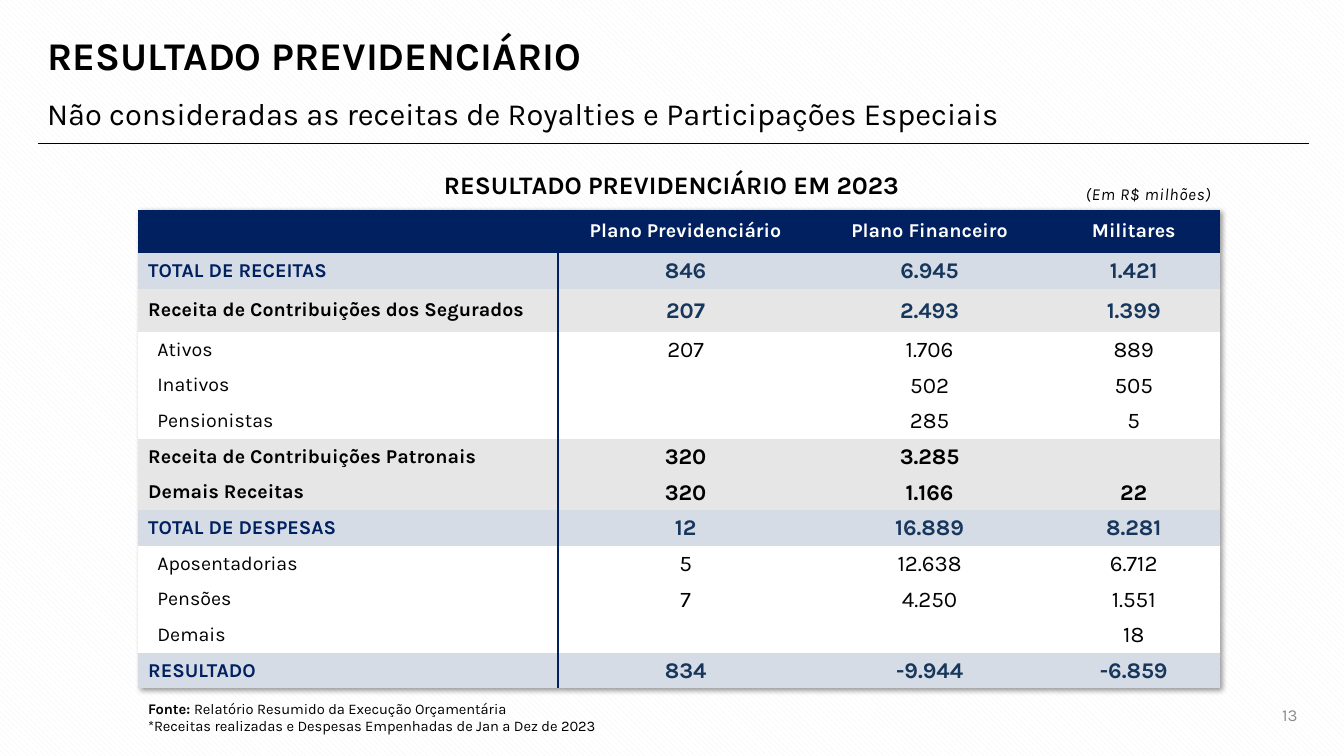
from lxml import etree
from pptx import Presentation
from pptx.dml.color import RGBColor
from pptx.enum.dml import MSO_PATTERN
from pptx.enum.shapes import MSO_CONNECTOR
from pptx.enum.text import MSO_ANCHOR, MSO_AUTO_SIZE, PP_ALIGN
from pptx.oxml import parse_xml
from pptx.oxml.ns import qn
from pptx.util import Inches, Pt

LEFT, CENTER, RIGHT = PP_ALIGN.LEFT, PP_ALIGN.CENTER, PP_ALIGN.RIGHT
TOP, MIDDLE = MSO_ANCHOR.TOP, MSO_ANCHOR.MIDDLE
NO_FIT = MSO_AUTO_SIZE.NONE
DIAGONAL = MSO_PATTERN.WIDE_DOWNWARD_DIAGONAL
STRAIGHT = MSO_CONNECTOR.STRAIGHT

FONT = "Karla"
BLACK, WHITE, NAVY, FIGURE_BLUE = "000000", "FFFFFF", "002060", "16365C"
PALE_BLUE, PALE_GREY, PAGE_GREY = "D6DCE5", "E7E6E6", "8C8C8C"
PLAIN_TABLE = "{2D5ABB26-0587-4C30-8999-92F81FD0307C}"
TABLE_SHADOW = (
    '<a:effectLst xmlns:a="http://schemas.openxmlformats.org/drawingml/2006/main">'
    '<a:outerShdw blurRad="50800" dist="38100" dir="2700000" algn="tl" rotWithShape="0">'
    '<a:srgbClr val="000000"><a:alpha val="40000"/></a:srgbClr>'
    '</a:outerShdw></a:effectLst>'
)

# Row kind: fill, label colour, figure colour, bold, left margin of the label
ROW_STYLES = {
    "total": (PALE_BLUE, NAVY, FIGURE_BLUE, True, 0.1),
    "highlight": (PALE_GREY, BLACK, FIGURE_BLUE, True, 0.1),
    "group": (PALE_GREY, BLACK, BLACK, True, 0.1),
    "item": (WHITE, BLACK, BLACK, False, 0.19),
}
COLUMN_WIDTHS = (4.18, 2.5, 2.34, 1.71)
HEADINGS = ("", "Plano Previdenciário", "Plano Financeiro", "Militares")
ROWS = (
    ("total", "TOTAL DE RECEITAS", "846", "6.945", "1.421"),
    ("highlight", "Receita de Contribuições dos Segurados", "207", "2.493", "1.399"),
    ("item", "Ativos", "207", "1.706", "889"),
    ("item", "Inativos", "", "502", "505"),
    ("item", "Pensionistas", "", "285", "5"),
    ("group", "Receita de Contribuições Patronais", "320", "3.285", ""),
    ("group", "Demais Receitas", "320", "1.166", "22"),
    ("total", "TOTAL DE DESPESAS", "12", "16.889", "8.281"),
    ("item", "Aposentadorias", "5", "12.638", "6.712"),
    ("item", "Pensões", "7", "4.250", "1.551"),
    ("item", "Demais", "", "", "18"),
    ("total", "RESULTADO", "834", "-9.944", "-6.859"),
)


def color(value):
    """Turn a hex string into a colour."""
    return RGBColor.from_string(value)


def add_span(para, text, size, ink=BLACK, bold=False, italic=False):
    """Append one formatted run to a paragraph."""
    span = para.add_run()
    span.text = text
    font = span.font
    font.name, font.size, font.bold, font.italic = FONT, Pt(size), bold, italic
    font.color.rgb = color(ink)
    return span


def format_frame(frame, anchor, align, spacing=None):
    """Set up a wrapping text frame and return its first paragraph."""
    frame.word_wrap = True
    frame.auto_size = NO_FIT
    frame.vertical_anchor = anchor
    para = frame.paragraphs[0]
    para.alignment = align
    para.line_spacing = spacing
    return para


def add_text(page, box, align=LEFT, anchor=TOP, spacing=None):
    """Add a text box and return its first paragraph and its frame."""
    frame = page.shapes.add_textbox(*map(Inches, box)).text_frame
    return format_frame(frame, anchor, align, spacing), frame


def add_rule(page, start, end, ink, weight):
    """Draw a straight line without shadow."""
    rule = page.shapes.add_connector(STRAIGHT, *map(Inches, start + end))
    rule.line.color.rgb = color(ink)
    rule.line.width = Pt(weight)
    etree.SubElement(rule._element.spPr, qn("a:effectLst"))


def add_header(page, box):
    """Place the title, the subtitle and the rule under them."""
    left, top, width, height = box
    title = page.shapes.title
    title.left, title.top = Inches(left), Inches(top)
    title.width, title.height = Inches(7.85), Inches(0.79)
    para = format_frame(title.text_frame, MIDDLE, LEFT, 0.9)
    add_span(para, "RESULTADO PREVIDENCIÁRIO", 28, bold=True)
    para, _ = add_text(page, (left, top + 0.61, width, 0.59), LEFT, MIDDLE, 1.2)
    add_span(para, "Não consideradas as receitas de Royalties e Participações Especiais", 22)
    bottom = top + height
    add_rule(page, (left + 0.01, bottom), (left + width + 0.01, bottom), BLACK, 0.5)


def add_caption(page, box):
    """Place the table heading and its unit of measure."""
    left, top, width, height = box
    para, _ = add_text(page, (left, top, width, 0.4), CENTER)
    add_span(para, "RESULTADO PREVIDENCIÁRIO EM 2023", 18, bold=True)
    unit_box = (left + width - 2.4, top + 0.1, 2.09, height - 0.1)
    para, _ = add_text(page, unit_box, RIGHT, spacing=1.2)
    span = add_span(para, "(Em R$ milhões)", 12, italic=True)
    span.font._element.set("spc", "50")


def fill_cell(cell, text, fill, size, ink, bold, align, margins):
    """Fill one table cell; margins run left, top, right, bottom."""
    cell.fill.solid()
    cell.fill.fore_color.rgb = color(fill)
    cell.vertical_anchor = MIDDLE
    (cell.margin_left, cell.margin_top,
     cell.margin_right, cell.margin_bottom) = map(Inches, margins)
    para = cell.text_frame.paragraphs[0]
    para.alignment = align
    if text:
        add_span(para, text, size, ink, bold)
    else:
        para.font.size = Pt(size)


def add_results(page, box):
    """Build the results table and the line after its first column."""
    left, top, width, height = box
    frame = page.shapes.add_table(len(ROWS) + 1, len(HEADINGS), *map(Inches, box))
    table = frame.table
    table.first_row = table.horz_banding = False
    properties = table._tbl.tblPr
    properties.find(qn("a:tableStyleId")).text = PLAIN_TABLE
    properties.insert(0, parse_xml(TABLE_SHADOW))

    tall = 0.43
    short = (height - 2 * tall) / (len(ROWS) - 1)
    for column, column_width in zip(table.columns, COLUMN_WIDTHS):
        column.width = Inches(column_width)
    for index, row in enumerate(table.rows):
        row.height = Inches(tall if index in (0, 2) else short)

    for column, heading in enumerate(HEADINGS):
        fill_cell(table.cell(0, column), heading, NAVY, 14, WHITE, True,
                  CENTER, (0.1, 0.05, 0.1, 0.05))
    for index, (kind, label, *figures) in enumerate(ROWS, 1):
        fill, label_ink, figure_ink, bold, indent = ROW_STYLES[kind]
        fill_cell(table.cell(index, 0), label, fill, 14, label_ink, bold,
                  LEFT, (indent, 0.05, 0.1, 0.05))
        for column, figure in enumerate(figures, 1):
            fill_cell(table.cell(index, column), figure, fill, 16, figure_ink, bold,
                      CENTER, (0.01, 0.01, 0.01, 0))

    divider = left + COLUMN_WIDTHS[0] - 0.02
    add_rule(page, (divider, top + tall), (divider, top + height), NAVY, 1.5)


def add_footer(page, box):
    """Place the source note and the page number."""
    left, top, width, height = box
    para, frame = add_text(page, (left, top, 4.74, height))
    add_span(para, "Fonte: ", 10.5, bold=True)
    add_span(para, "Relatório Resumido da Execução Orçamentária", 10.5)
    add_span(frame.add_paragraph(),
             "*Receitas realizadas e Despesas Empenhadas de Jan a Dez de 2023", 10.5)
    para, _ = add_text(page, (left + width - 0.96, top, 0.96, 0.4), RIGHT, MIDDLE)
    add_span(para, "13", 12, PAGE_GREY)


def main():
    """Build the deck and save it."""
    deck = Presentation()
    deck.slide_width, deck.slide_height = Inches(13.33), Inches(7.5)
    page = deck.slides.add_slide(deck.slide_layouts[5])
    backdrop = page.background.fill
    backdrop.patterned()
    backdrop.pattern = DIAGONAL
    backdrop.fore_color.rgb = color("F2F2F2")
    backdrop.back_color.rgb = color(WHITE)
    add_header(page, (0.37, 0.18, 12.6, 1.24))
    add_caption(page, (0.9, 1.63, 11.52, 0.52))
    add_results(page, (1.37, 2.08, 10.73, 4.75))
    add_footer(page, (1.37, 6.89, 11.6, 0.45))
    deck.save("out.pptx")


if __name__ == "__main__":
    main()
